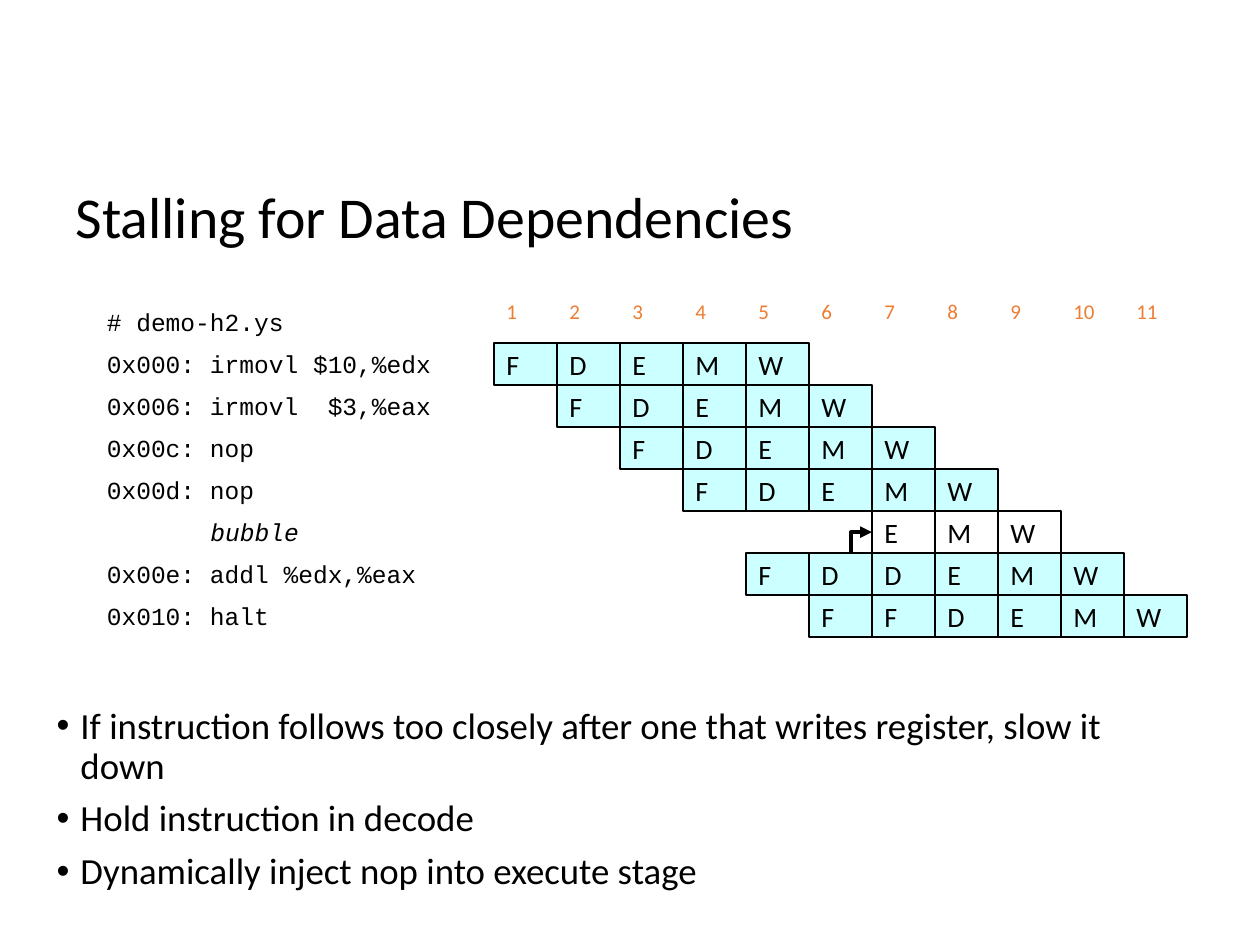
from dataclasses import dataclass

from lxml.etree import SubElement
from pptx import Presentation
from pptx.dml.color import RGBColor
from pptx.enum.shapes import MSO_SHAPE
from pptx.enum.text import MSO_ANCHOR, MSO_AUTO_SIZE, PP_ALIGN
from pptx.oxml.ns import qn
from pptx.util import Inches, Pt


@dataclass(frozen=True)
class Theme:
    text_font: str = "Calibri"
    code_font: str = "Courier New"
    black: RGBColor = RGBColor(0x00, 0x00, 0x00)
    white: RGBColor = RGBColor(0xFF, 0xFF, 0xFF)
    stage: RGBColor = RGBColor(0xCC, 0xFF, 0xFF)
    cycle: RGBColor = RGBColor(0xED, 0x7D, 0x31)
    title_size: int = 33
    body_size: int = 21
    stage_size: int = 16
    code_size: int = 14
    cycle_size: int = 12


THEME = Theme()
SLIDE_WIDTH, SLIDE_HEIGHT = Inches(9.99), Inches(7.49)
COLUMN = SLIDE_WIDTH / 20
ROW = SLIDE_HEIGHT / 22.5
CYCLE_COUNT = 11
BUBBLE = "bubble"
BUBBLE_INDENT = Inches(0.82)

# Instruction, first cycle (counted from 0), stages
PIPELINE = [
    ("0x000: irmovl $10,%edx", 0, "FDEMW"),
    ("0x006: irmovl  $3,%eax", 1, "FDEMW"),
    ("0x00c: nop", 2, "FDEMW"),
    ("0x00d: nop", 3, "FDEMW"),
    (BUBBLE, 6, "EMW"),
    ("0x00e: addl %edx,%eax", 4, "FDDEMW"),
    ("0x010: halt", 5, "FFDEMW"),
]
POINTS = [
    "If instruction follows too closely after one that writes register, slow it down",
    "Hold instruction in decode",
    "Dynamically inject nop into execute stage",
]


def grid_box(left, top, width, height=1):
    """Turn columns and rows of the grid into lengths."""
    return [round(length) for length in
            (left * COLUMN, top * ROW, width * COLUMN, height * ROW)]


def add_run(paragraph, text, size, color=THEME.black, font=THEME.text_font):
    run = paragraph.add_run()
    run.text = text
    run.font.size = Pt(size)
    run.font.name = font
    run.font.color.rgb = color
    return run


def add_cell(slide, box, text, size, fill=None, outlined=False,
             color=THEME.black, font=THEME.text_font):
    cell = slide.shapes.add_shape(MSO_SHAPE.RECTANGLE, *box)
    cell.shadow.inherit = False
    if fill is None:
        cell.fill.background()
    else:
        cell.fill.solid()
        cell.fill.fore_color.rgb = fill
    if outlined:
        cell.line.color.rgb = THEME.black
        cell.line.width = Pt(1)
    else:
        cell.line.fill.background()
    frame = cell.text_frame
    frame.word_wrap = False
    frame.vertical_anchor = MSO_ANCHOR.MIDDLE
    paragraph = frame.paragraphs[0]
    paragraph.alignment = PP_ALIGN.LEFT
    add_run(paragraph, text, size, color, font)
    return cell


def add_title(slide, box, text):
    title = slide.shapes.title
    title.left, title.top, title.width, title.height = box
    frame = title.text_frame
    frame.auto_size = MSO_AUTO_SIZE.NONE
    frame.vertical_anchor = MSO_ANCHOR.MIDDLE
    paragraph = frame.paragraphs[0]
    paragraph.alignment = PP_ALIGN.LEFT
    paragraph.line_spacing = 0.9
    add_run(paragraph, text, THEME.title_size)


def add_points(slide, box, points):
    frame = slide.shapes.add_textbox(*box).text_frame
    frame.word_wrap = True
    for index, point in enumerate(points):
        paragraph = frame.add_paragraph() if index else frame.paragraphs[0]
        paragraph.line_spacing = 0.9
        paragraph.space_before = Pt(7.5)
        add_run(paragraph, point, THEME.body_size)
        # Hanging bullet
        properties = paragraph._p.get_or_add_pPr()
        properties.set("marL", str(Inches(0.19)))
        properties.set("indent", str(-Inches(0.19)))
        SubElement(properties, qn("a:buFont"), typeface="Arial")
        SubElement(properties, qn("a:buChar"), char="•")


def add_listing(slide, left, top, width):
    lines = ["# demo-h2.ys"] + [code for code, _, _ in PIPELINE]
    for index, line in enumerate(lines):
        cell = add_cell(slide, grid_box(left, top + index, width), line,
                        THEME.code_size, THEME.white, font=THEME.code_font)
        if line == BUBBLE:
            cell.text_frame.margin_left += BUBBLE_INDENT
            cell.text_frame.paragraphs[0].runs[0].font.italic = True


def add_cycles(slide, left, top):
    for index in range(CYCLE_COUNT):
        add_cell(slide, grid_box(left + index, top, 1), str(index + 1),
                 THEME.cycle_size, THEME.white, color=THEME.cycle)


def add_stages(slide, left, top):
    for row, (code, start, stages) in enumerate(PIPELINE):
        fill = None if code == BUBBLE else THEME.stage
        for column, stage in enumerate(stages, start):
            add_cell(slide, grid_box(left + column, top + row, 1), stage,
                     THEME.stage_size, fill, outlined=True)


def add_bubble_arrow(slide, left, top):
    """Lead from the stalled decode up into the bubble's first stage."""
    row, (_, start, _) = next(
        (index, entry) for index, entry in enumerate(PIPELINE) if entry[0] == BUBBLE)
    x, y, run, rise = grid_box(left + start - 1 / 3, top + row + 0.5, 1 / 3, 0.5)
    builder = slide.shapes.build_freeform(x, y + rise)
    builder.add_line_segments([(x, y), (x + run, y)], close=False)
    arrow = builder.convert_to_shape()
    arrow.shadow.inherit = False
    arrow.fill.background()
    arrow.line.color.rgb = THEME.black
    arrow.line.width = Pt(2.25)
    SubElement(arrow.line._get_or_add_ln(), qn("a:tailEnd"), type="triangle")


def build_stalling_slide(presentation):
    slide = presentation.slides.add_slide(presentation.slide_layouts[5])
    add_title(slide, grid_box(1, 3.15, 18, 4.15), "Stalling for Data Dependencies")
    add_points(slide, grid_box(0.7, 16.7, 18.15, 5.47), POINTS)
    # Program and its pipeline diagram
    diagram_left, diagram_top = 7.84, 8.17
    add_listing(slide, 1.5, diagram_top - 1, 5.67)
    add_cycles(slide, diagram_left, diagram_top - 1.25)
    add_stages(slide, diagram_left, diagram_top)
    add_bubble_arrow(slide, diagram_left, diagram_top)


def main():
    presentation = Presentation()
    presentation.slide_width = SLIDE_WIDTH
    presentation.slide_height = SLIDE_HEIGHT
    build_stalling_slide(presentation)
    presentation.save("out.pptx")


if __name__ == "__main__":
    main()
